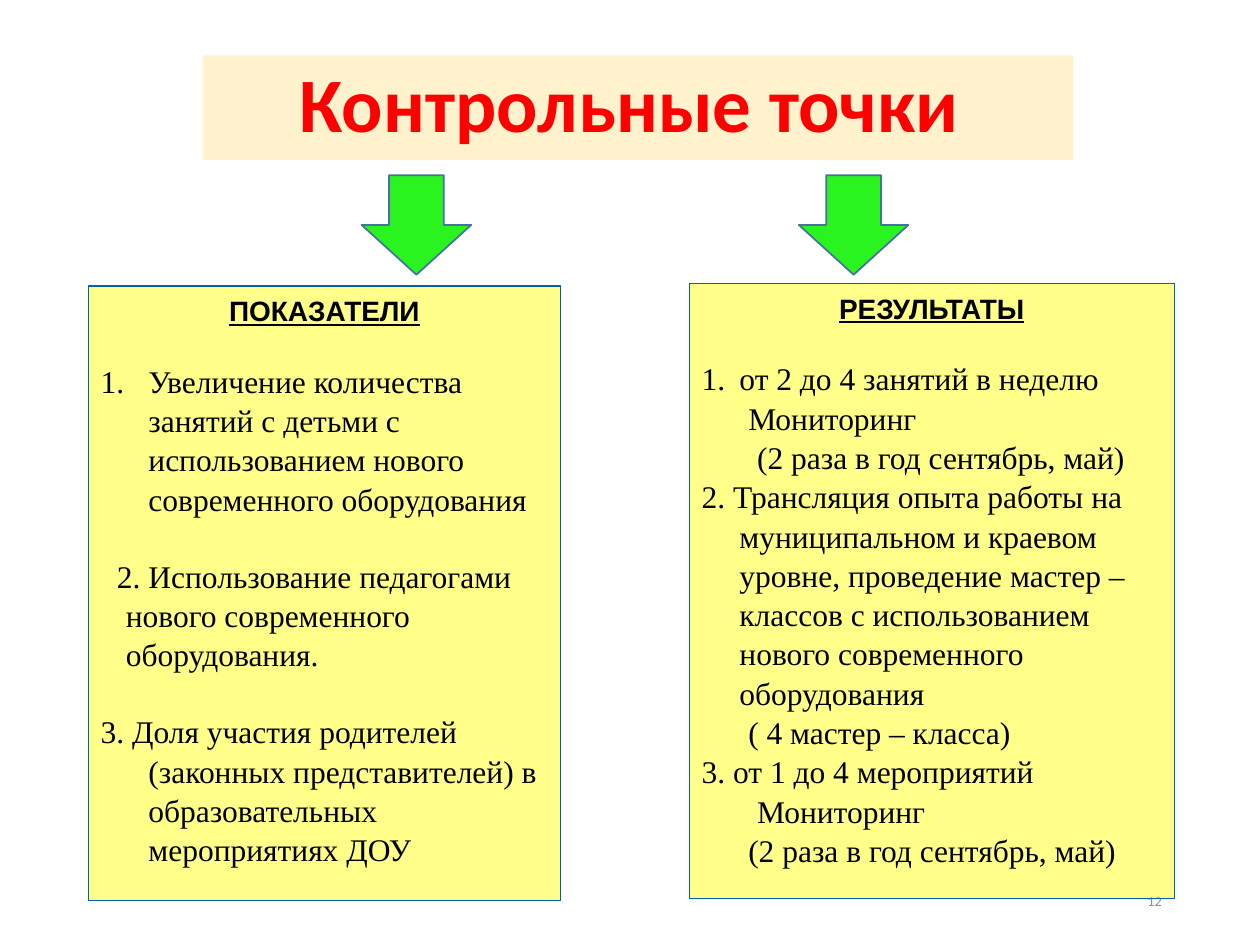
from lxml import etree
from pptx import Presentation
from pptx.dml.color import RGBColor
from pptx.enum.shapes import MSO_SHAPE
from pptx.enum.text import MSO_ANCHOR, PP_ALIGN
from pptx.oxml.ns import qn
from pptx.util import Inches, Pt

RECTANGLE, DOWN_ARROW = MSO_SHAPE.RECTANGLE, MSO_SHAPE.DOWN_ARROW
CENTER, RIGHT, LEFT = PP_ALIGN.CENTER, PP_ALIGN.RIGHT, PP_ALIGN.LEFT
TOP, MIDDLE = MSO_ANCHOR.TOP, MSO_ANCHOR.MIDDLE

COLORS = {
    "title_fill": "FFF2CC", "title": "FF0000", "panel": "FFFF00",
    "panel_line": "0062A7", "arrow": "2AF420", "arrow_line": "43739E",
    "text": "000000", "number": "8C8C8C",
}
CELL = 0.1  # the slide is a grid of 100 columns by 75 rows
PANEL_OPACITY = 46
PANEL_LINE_SPACING = 1.04
HEADING_GAP, ITEM_GAP = 19, 21.6

# Each item: text, left margin, first-line indent (columns), space before, numbered
INDICATORS = [
    ("Увеличение количества занятий с детьми с использованием нового "
     "современного оборудования", 3.8, -3.8, HEADING_GAP, True),
    ("2. Использование педагогами нового современного оборудования.",
     2, -0.7, ITEM_GAP, False),
    ("3. Доля участия родителей (законных представителей) в "
     "образовательных мероприятиях ДОУ", 3.8, -3.8, ITEM_GAP, False),
]
RESULTS = [
    ("от 2 до 4 занятий в неделю", 3, -3, HEADING_GAP, True),
    ("Мониторинг", 3.7, 0, 0, False),
    ("(2 раза в год сентябрь, май)", 4.4, 0, 0, False),
    ("2. Трансляция опыта работы на муниципальном и краевом уровне, "
     "проведение мастер – классов с использованием нового современного "
     "оборудования", 3, -3, 0, False),
    ("( 4 мастер – класса)", 3.7, 0, 0, False),
    ("3. от 1 до 4 мероприятий", 3, -3, 0, False),
    ("Мониторинг", 4.4, 0, 0, False),
    ("(2 раза в год сентябрь, май)", 3.7, 0, 0, False),
]


def grid(value):
    return Inches(value * CELL)


def color(name):
    return RGBColor.from_string(COLORS[name])


def add_block(slide, kind, box, fill, line=None, width=0):
    shape = slide.shapes.add_shape(kind, *map(grid, box))
    shape.shadow.inherit = False
    shape.fill.solid()
    shape.fill.fore_color.rgb = color(fill)
    if line:
        shape.line.color.rgb = color(line)
        shape.line.width = Pt(width)
    else:
        shape.line.fill.background()
    return shape


def set_opacity(shape, percent):
    fill_color = shape.fill._xPr.find(qn("a:solidFill"))[0]
    etree.SubElement(fill_color, qn("a:alpha"), val=str(percent * 1000))


def style(paragraph, font_name, size, font_color, alignment, bold=False):
    paragraph.alignment = alignment
    font = paragraph.font
    font.name, font.size, font.bold = font_name, Pt(size), bold
    font.color.rgb = color(font_color)


def set_indent(paragraph, margin, indent, numbered):
    properties = paragraph._p.get_or_add_pPr()
    properties.set("marL", str(grid(margin)))
    properties.set("indent", str(grid(indent)))
    if numbered:
        etree.SubElement(properties, qn("a:buFont"), typeface="+mj-lt")
        etree.SubElement(properties, qn("a:buAutoNum"), type="arabicPeriod")


def add_title(slide, box, text):
    frame = add_block(slide, RECTANGLE, box, "title_fill").text_frame
    frame.word_wrap = True
    frame.vertical_anchor = MIDDLE
    paragraph = frame.paragraphs[0]
    paragraph.text = text
    paragraph.line_spacing = 0.9
    style(paragraph, "Calibri", 44, "title", CENTER, bold=True)


def add_panel(slide, box, heading, items):
    shape = add_block(slide, RECTANGLE, box, "panel", "panel_line", 0.75)
    set_opacity(shape, PANEL_OPACITY)
    frame = shape.text_frame
    frame.word_wrap = True
    frame.vertical_anchor = TOP
    title = frame.paragraphs[0]
    title.text = heading
    title.line_spacing = PANEL_LINE_SPACING
    style(title, "Arial", 16, "text", CENTER, bold=True)
    title.font.underline = True
    for text, margin, indent, gap, numbered in items:
        paragraph = frame.add_paragraph()
        paragraph.text = text
        paragraph.line_spacing = PANEL_LINE_SPACING
        paragraph.space_before = Pt(gap)
        set_indent(paragraph, margin, indent, numbered)
        style(paragraph, "Times New Roman", 18, "text", LEFT)


def add_page_number(slide, box, number):
    frame = slide.shapes.add_textbox(*map(grid, box)).text_frame
    frame.word_wrap = True
    frame.vertical_anchor = MIDDLE
    paragraph = frame.paragraphs[0]
    paragraph.text = number
    style(paragraph, "Calibri", 8.2, "number", RIGHT)


def build_checkpoints(presentation):
    slide = presentation.slides.add_slide(presentation.slide_layouts[6])
    add_title(slide, (16.1, 4.4, 69.1, 8.3), "Контрольные точки ")
    add_page_number(slide, (70.7, 69.5, 22.5, 4), "12")
    add_panel(slide, (7, 22.7, 37.5, 48.8), "ПОКАЗАТЕЛИ", INDICATORS)
    add_panel(slide, (54.7, 22.5, 38.5, 48.8), "РЕЗУЛЬТАТЫ", RESULTS)
    for left in (28.7, 63.4):
        add_block(slide, DOWN_ARROW, (left, 13.9, 8.7, 7.9),
                  "arrow", "arrow_line", 1)


def main():
    presentation = Presentation()
    presentation.slide_width = grid(100)
    presentation.slide_height = grid(75)
    build_checkpoints(presentation)
    presentation.save("out.pptx")


if __name__ == "__main__":
    main()
